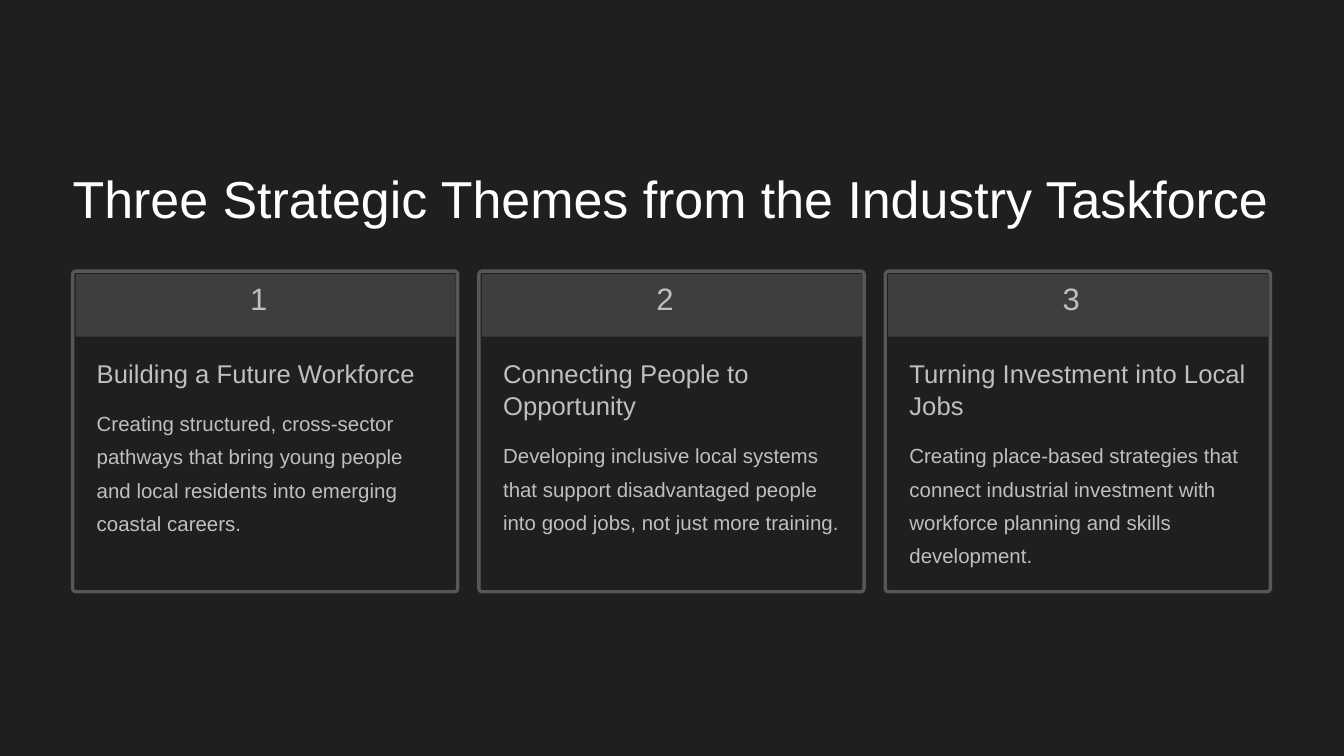
from pptx import Presentation
from pptx.dml.color import RGBColor
from pptx.enum.shapes import MSO_SHAPE
from pptx.enum.text import MSO_ANCHOR, MSO_AUTO_SIZE, PP_ALIGN
from pptx.util import Inches, Pt

BACKGROUND = RGBColor(0x1F, 0x1F, 0x1F)
TITLE_WHITE = RGBColor(0xFE, 0xFE, 0xFE)
TEXT_GREY = RGBColor(0xBF, 0xBF, 0xBF)
BORDER_GREY = RGBColor(0x57, 0x57, 0x57)
HEADER_GREY = RGBColor(0x3E, 0x3E, 0x3E)

THEMES = [
    ("Building a Future Workforce", 1,
     "Creating structured, cross-sector pathways that bring young people "
     "and local residents into emerging coastal careers."),
    ("Connecting People to Opportunity", 2,
     "Developing inclusive local systems that support disadvantaged people "
     "into good jobs, not just more training."),
    ("Turning Investment into Local Jobs", 2,
     "Creating place-based strategies that connect industrial investment "
     "with workforce planning and skills development."),
]
CARD_LEFT, CARD_PITCH = 0.72, 4.03
HEADING_TOP, HEADING_LINE, HEADING_GAP = 3.54, 0.32, 0.13


class ThemeSlide:
    """Draws the title and theme cards in one shared style."""

    font_name = "Arial"

    def __init__(self, presentation):
        self.slide = presentation.slides.add_slide(presentation.slide_layouts[5])
        fill = self.slide.background.fill
        fill.solid()
        fill.fore_color.rgb = BACKGROUND

    def set_text(self, holder, text, size, leading, color, wrap=True):
        frame = holder.text_frame
        frame.margin_left = frame.margin_right = 0
        frame.margin_top = frame.margin_bottom = 0
        frame.vertical_anchor = MSO_ANCHOR.TOP
        frame.auto_size = MSO_AUTO_SIZE.NONE
        frame.word_wrap = wrap
        paragraph = frame.paragraphs[0]
        paragraph.alignment = PP_ALIGN.LEFT
        paragraph.line_spacing = Pt(leading)
        run = paragraph.add_run()
        run.text = text
        run.font.name = self.font_name
        run.font.size = Pt(size)
        run.font.color.rgb = color

    def title(self, text):
        heading = self.slide.shapes.title
        heading.left, heading.top = Inches(CARD_LEFT), Inches(1.63)
        heading.width, heading.height = Inches(11.9), Inches(0.65)
        self.set_text(heading, text, 37.1, 46.2, TITLE_WHITE, wrap=False)

    def text(self, left, top, width, height, text, size, leading):
        box = self.slide.shapes.add_textbox(
            Inches(left), Inches(top), Inches(width), Inches(height))
        self.set_text(box, text, size, leading, TEXT_GREY)

    def border(self, left, top, width, height):
        outline = self.slide.shapes.add_shape(
            MSO_SHAPE.ROUNDED_RECTANGLE,
            Inches(left), Inches(top), Inches(width), Inches(height))
        outline.adjustments[0] = 0.01
        outline.shadow.inherit = False
        outline.fill.background()
        outline.line.color.rgb = BORDER_GREY
        outline.line.width = Pt(2.4)

    def band(self, left, top, width, height):
        header = self.slide.shapes.add_shape(
            MSO_SHAPE.RECTANGLE,
            Inches(left), Inches(top), Inches(width), Inches(height))
        header.shadow.inherit = False
        header.fill.solid()
        header.fill.fore_color.rgb = HEADER_GREY
        header.line.fill.background()

    def card(self, left, number, heading, heading_lines, description):
        heading_height = heading_lines * HEADING_LINE
        description_top = HEADING_TOP + heading_height + HEADING_GAP
        self.border(left, 2.69, 3.82, 3.18)
        self.band(left + 0.03, 2.72, 3.77, 0.62)
        self.text(left + 1.76, 2.83, 0.31, 0.39, str(number), 22.1, 22.1)
        self.text(left + 0.24, HEADING_TOP, 3.36, heading_height, heading, 18.3, 22.9)
        self.text(left + 0.24, description_top, 3.36, 1.32, description, 14.6, 23.8)


def main():
    presentation = Presentation()
    presentation.slide_width = Inches(13.33)
    presentation.slide_height = Inches(7.5)
    themes = ThemeSlide(presentation)
    themes.title("Three Strategic Themes from the Industry Taskforce")
    for index, (heading, heading_lines, description) in enumerate(THEMES):
        left = CARD_LEFT + index * CARD_PITCH
        themes.card(left, index + 1, heading, heading_lines, description)
    presentation.save("out.pptx")


if __name__ == "__main__":
    main()
